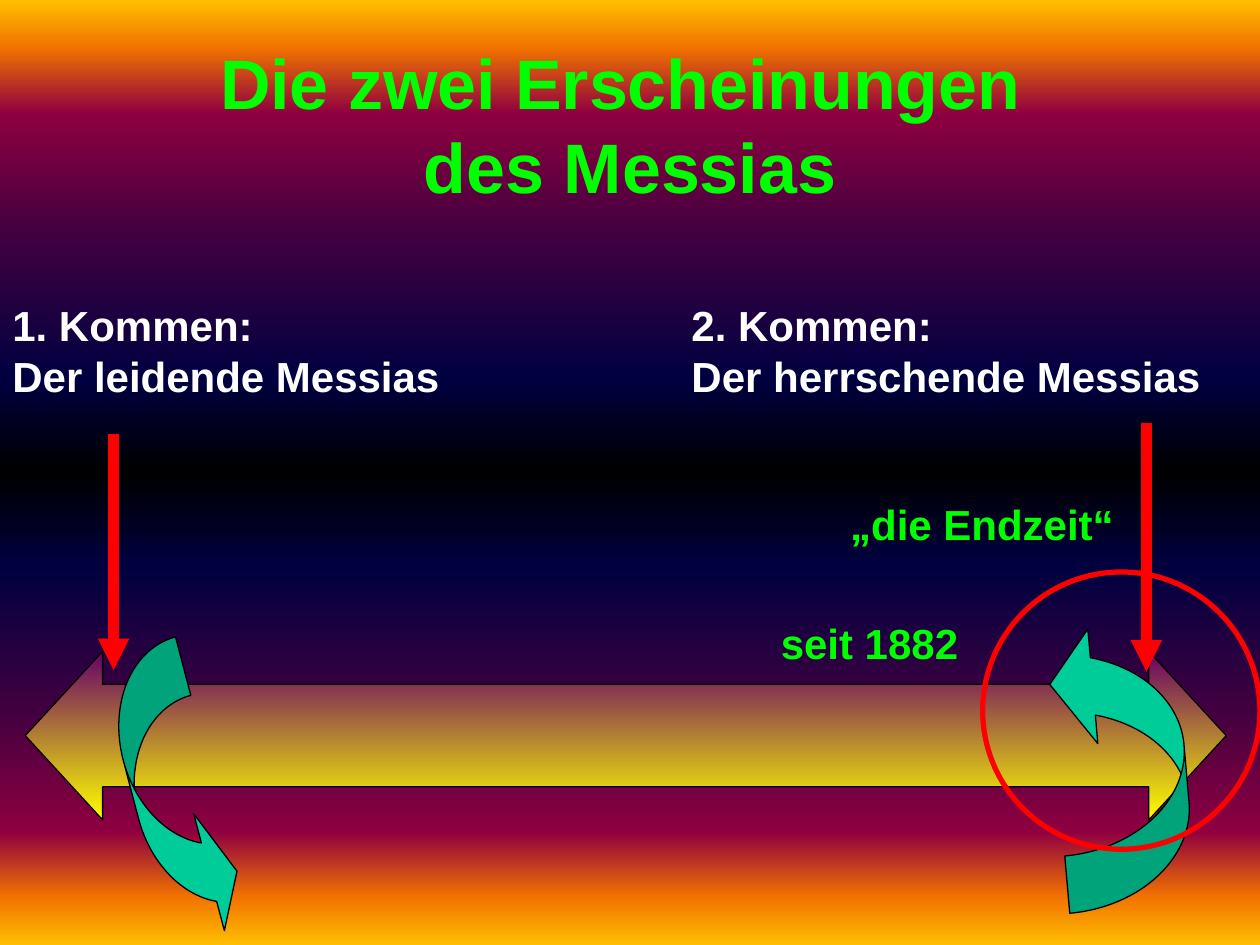
import pptx
import pptx.util
import pptx.dml.color
import pptx.enum.shapes
import pptx.enum.text
import pptx.oxml
import pptx.oxml.ns
from lxml import etree

Cm, Pt = pptx.util.Cm, pptx.util.Pt
Kind = pptx.enum.shapes.MSO_SHAPE
Align = pptx.enum.text.PP_ALIGN
Anchor = pptx.enum.text.MSO_ANCHOR
Fit = pptx.enum.text.MSO_AUTO_SIZE
qn = pptx.oxml.ns.qn

GREEN, RED, TEAL = "00FF00", "FF0000", "00CC99"
WHITE, BLACK = "FFFFFF", "000000"
HALF = [(0, "FFBF00"), (5, "F27300"), (12, "8F0040"), (25, "400040"), (40, "000040")]
FIRE = HALF + [(50, BLACK)] + [(100 - pos, hue) for pos, hue in reversed(HALF)]


def color(code):
    return pptx.dml.color.RGBColor.from_string(code)


def blend(fill, root, stops):
    """Fill from top to bottom; root is the element that holds the fill."""
    fill.gradient()
    fill.gradient_angle = 270
    group = root.find(".//" + qn("a:gsLst"))
    for old in list(group):
        group.remove(old)
    for pos, hue in stops:
        stop = etree.SubElement(group, qn("a:gs"), pos=str(pos * 1000))
        etree.SubElement(stop, qn("a:srgbClr"), val=hue)


def write(frame, text, size=24, hue=WHITE, align=Align.LEFT, font="Arial"):
    """Each line of text is a paragraph; a vertical tab breaks a line."""
    frame.text = text
    for par in frame.paragraphs:
        par.alignment = align
        for run in par.runs:
            run.font.name, run.font.size, run.font.bold = font, Pt(size), True
            run.font.color.rgb = color(hue)


class Deck:
    def __init__(self):
        self.file = pptx.Presentation()
        self.file.slide_width, self.file.slide_height = Cm(25.4), Cm(19.05)
        self.slide = self.file.slides.add_slide(self.file.slide_layouts[6])

    def back(self, stops):
        blend(self.slide.background.fill, self.slide.element, stops)

    def shape(self, kind, box, fill=None, line=BLACK, width=0.75, adj=(), turn=0, flip=False):
        item = self.slide.shapes.add_shape(kind, *map(Cm, box))
        item.shadow.inherit = False
        for i, val in enumerate(adj):
            item.adjustments[i] = val
        if fill is None:
            item.fill.background()
        elif isinstance(fill, list):
            blend(item.fill, item.element, fill)
        else:
            item.fill.solid()
            item.fill.fore_color.rgb = color(fill)
        item.line.color.rgb, item.line.width = color(line), Pt(width)
        item.rotation = turn
        if flip:
            item.element.spPr.find(qn("a:xfrm")).set("flipV", "1")

    def arrow(self, x, top, end):
        item = self.slide.shapes.add_connector(
            pptx.enum.shapes.MSO_CONNECTOR.STRAIGHT, Cm(x), Cm(top), Cm(x), Cm(end))
        item.line.color.rgb, item.line.width = color(RED), Pt(6)
        line = item.element.spPr.find(qn("a:ln"))
        etree.SubElement(line, qn("a:tailEnd"), type="triangle")
        etree.SubElement(item.element.spPr, qn("a:effectLst"))

    def text(self, box, words, wrap=True, grow=True, anchor=Anchor.TOP, **style):
        frame = self.slide.shapes.add_textbox(*map(Cm, box)).text_frame
        frame.word_wrap, frame.vertical_anchor = wrap, anchor
        frame.auto_size = Fit.SHAPE_TO_FIT_TEXT if grow else Fit.NONE
        write(frame, words, **style)


def main():
    deck = Deck()
    deck.back(FIRE)
    deck.shape(Kind.LEFT_RIGHT_ARROW, (0.51, 13.13, 24.21, 3.4),
               [(0, "660066"), (100, "FFFF00")], adj=(0.608, 0.459))
    deck.arrow(2.29, 8.74, 13.51)
    deck.arrow(23.11, 8.53, 13.54)
    deck.text((0, 5.92, 11.3, 2.29), "1. Kommen:\nDer leidende Messias")
    deck.text((13.69, 5.92, 11.71, 2.29), "2. Kommen:\nDer herrschende Messias")
    deck.text((0, 0.91, 25.4, 3.18), "Die zwei Erscheinungen \vdes Messias",
              grow=False, anchor=Anchor.MIDDLE, size=40, hue=GREEN, align=Align.CENTER)
    deck.shape(Kind.CURVED_RIGHT_ARROW, (2.69, 12.95, 1.65, 6.1), TEAL,
               adj=(0.738, 1.476, 0.333), turn=345.3)
    deck.shape(Kind.CURVED_LEFT_ARROW, (21.31, 12.52, 2.59, 5.79), TEAL,
               adj=(0.448, 0.895, 0.333), turn=355, flip=True)
    deck.shape(Kind.OVAL, (19.81, 11.53, 5.59, 5.59), line=RED, width=3, turn=279)
    deck.text((16.89, 9.93, 5.82, 1.27), "„die Endzeit“", wrap=False, hue=GREEN)
    deck.text((15.49, 12.32, 4.09, 1.27), "seit 1882", wrap=False, hue=GREEN)
    deck.file.save("out.pptx")


if __name__ == "__main__":
    main()
